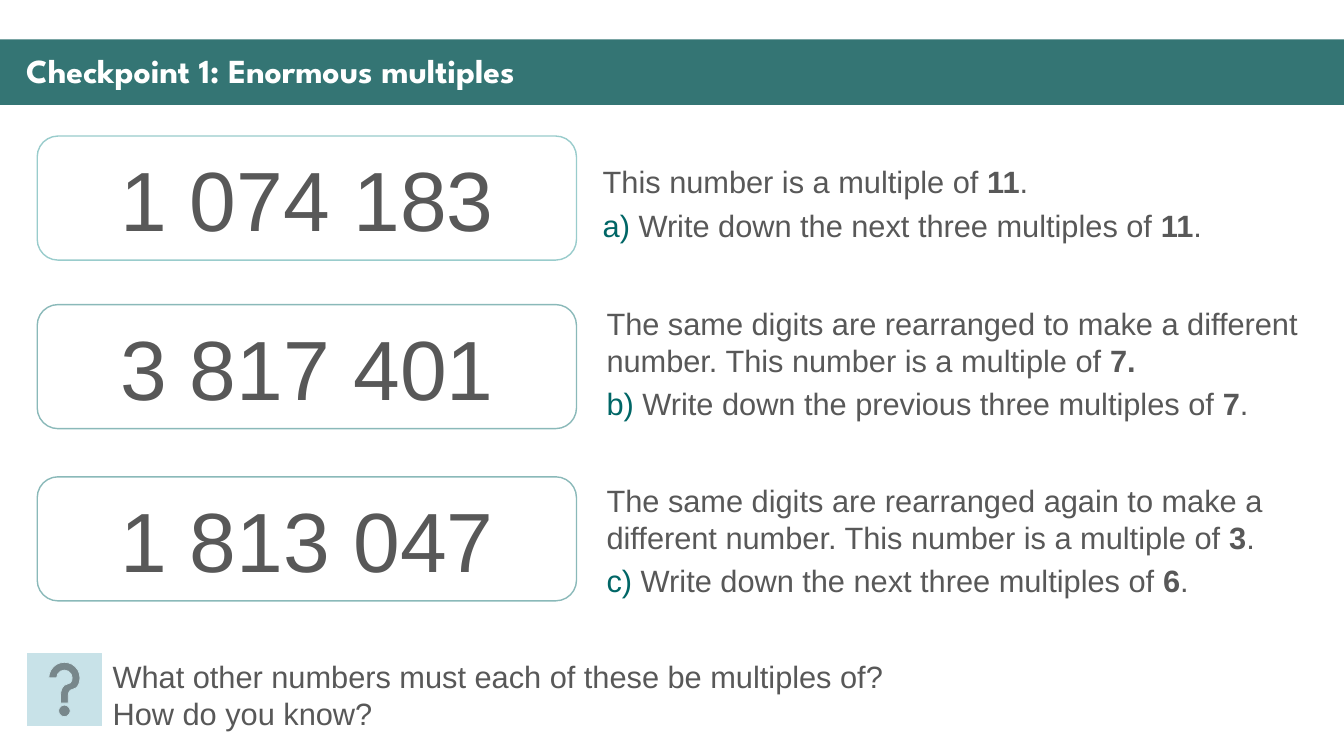
from pptx import Presentation
from pptx.dml.color import RGBColor
from pptx.enum.shapes import MSO_SHAPE
from pptx.enum.text import MSO_ANCHOR, MSO_AUTO_SIZE, PP_ALIGN
from pptx.util import Pt

RECTANGLE = MSO_SHAPE.RECTANGLE
ROUNDED = MSO_SHAPE.ROUNDED_RECTANGLE
HELP_BUTTON = MSO_SHAPE.ACTION_BUTTON_HELP
MIDDLE = MSO_ANCHOR.MIDDLE
NO_AUTOFIT = MSO_AUTO_SIZE.NONE
LEFT, CENTER = PP_ALIGN.LEFT, PP_ALIGN.CENTER

COLORS = {
    "band": "347574",
    "white": "FFFFFF",
    "text": "585858",
    "label": "006666",
    "first_border": "99CCCC",
    "border": "8AB9B9",
    "help": "C8E2E8",
}

QUESTIONS = [
    {
        "number": "1 074 183", "card_top": 97.2, "border": "first_border",
        "place": (423.4, 113, 527, 66.2),
        "fact": ("This number is a multiple of ", "11", "."),
        "task": ("a) ", "Write down the next three multiples of ", "11", "."),
    },
    {
        "number": "3 817 401", "card_top": 217.6, "border": "border",
        "place": (426.2, 213.8, 521.3, 92.9),
        "fact": ("The same digits are rearranged to make a different number. "
                 "This number is a multiple of ", "7."),
        "task": ("b) ", "Write down the previous three multiples of ", "7", "."),
    },
    {
        "number": "1 813 047", "card_top": 340.6, "border": "border",
        "place": (426.2, 340.6, 510.5, 92.9),
        "fact": ("The same digits are rearranged again to make a different number. "
                 "This number is a multiple of ", "3", "."),
        "task": ("c) ", "Write down the next three multiples of ", "6", "."),
    },
]


def add_panel(kind, place, fill, border=None, width=1):
    panel = page.shapes.add_shape(kind, *map(Pt, place))
    panel.shadow.inherit = False
    panel.fill.solid()
    panel.fill.fore_color.rgb = RGBColor.from_string(COLORS[fill])
    if border:
        panel.line.color.rgb = RGBColor.from_string(COLORS[border])
        panel.line.width = Pt(width)
    else:
        panel.line.fill.background()
    return panel


def add_span(para, text, size, color="text", bold=False, font="Arial"):
    span = para.add_run()
    span.text = text
    span.font.name = font
    span.font.size = Pt(size)
    span.font.bold = bold
    span.font.color.rgb = RGBColor.from_string(COLORS[color])


deck = Presentation()
deck.slide_width, deck.slide_height = Pt(960), Pt(540)
page = deck.slides.add_slide(deck.slide_layouts[5])

title = page.shapes.title
title.left, title.top, title.width, title.height = map(Pt, (11.5, 34.6, 938.9, 33.8))
title.text_frame.auto_size = NO_AUTOFIT
title.text_frame.vertical_anchor = MIDDLE
heading = title.text_frame.paragraphs[0]
heading.alignment = LEFT
heading.line_spacing = 0.9
add_span(heading, "Checkpoint 1: Enormous multiples", 24, "white", True, "League Spartan")

band = add_panel(RECTANGLE, (0, 28.2, 960, 46.8), "band")
title.element.addprevious(band.element)

for question in QUESTIONS:
    card = add_panel(ROUNDED, (26.6, question["card_top"], 385.2, 88.6),
                     "white", question["border"])
    card.text_frame.vertical_anchor = MIDDLE
    para = card.text_frame.paragraphs[0]
    para.alignment = CENTER
    add_span(para, question["number"], 60)

    box = page.shapes.add_textbox(*map(Pt, question["place"]))
    box.text_frame.word_wrap = True
    fact = box.text_frame.paragraphs[0]
    task = box.text_frame.add_paragraph()
    fact.space_before = task.space_before = Pt(4.4)
    label, *instruction = question["task"]
    add_span(task, label, 22, "label")
    for para, pieces in ((fact, question["fact"]), (task, instruction)):
        for index, piece in enumerate(pieces):
            add_span(para, piece, 22, bold=index == 1)

add_panel(HELP_BUTTON, (19.4, 466.6, 53.3, 51.8), "help", "help", 0.5)

box = page.shapes.add_textbox(*map(Pt, (73.4, 466.6, 592.6, 60.5)))
box.text_frame.word_wrap = True
para = box.text_frame.paragraphs[0]
para.space_before = Pt(4.4)
add_span(para, "What other numbers must each of these be multiples of? How do you know?", 22)

deck.save("out.pptx")
